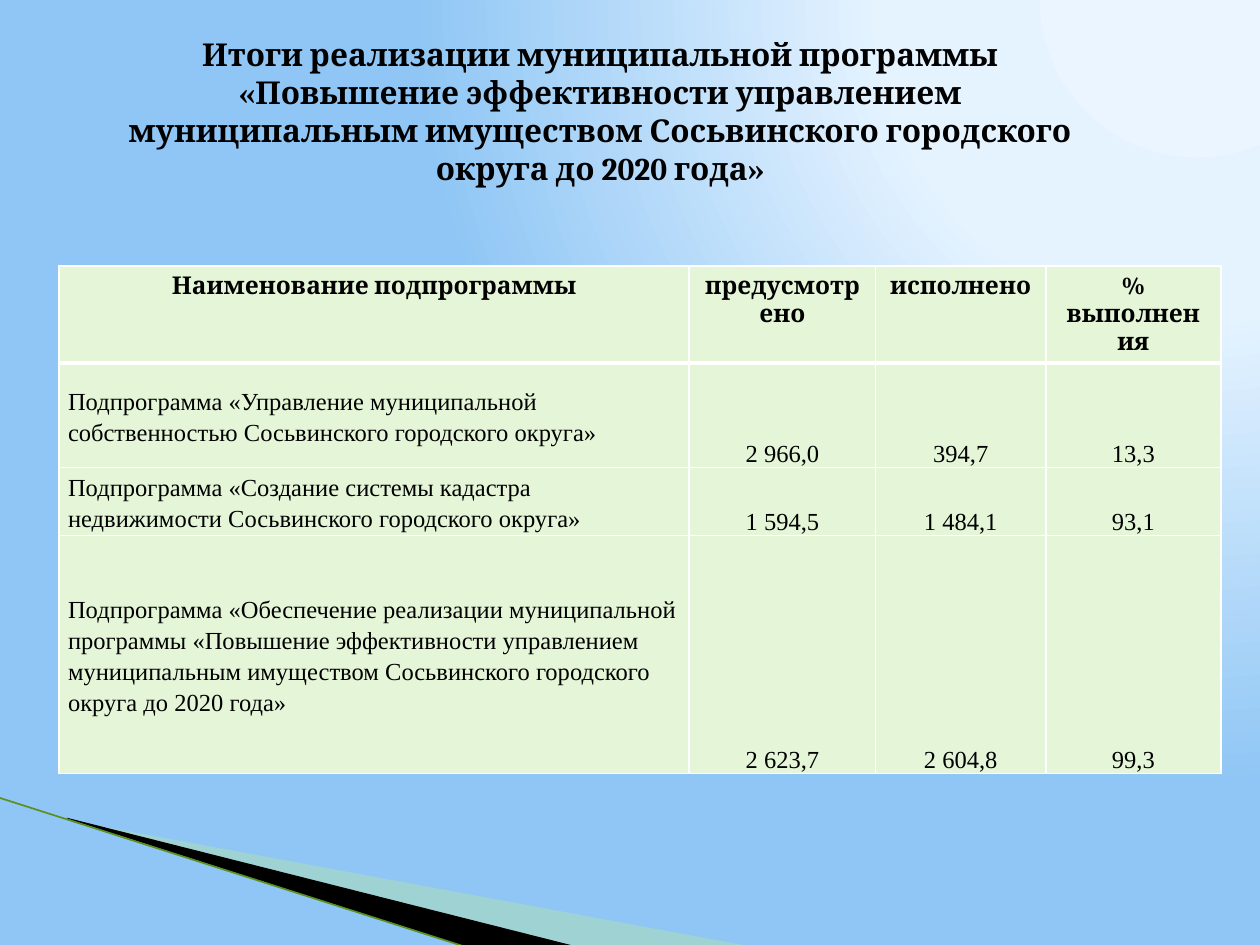
import pptx
import pptx.dml.color
import pptx.enum.shapes
import pptx.enum.text
import pptx.oxml
import pptx.oxml.ns
import pptx.util
from pptx.util import Inches

TITLE = ("Итоги реализации муниципальной программы «Повышение эффективности "
         "управлением муниципальным имуществом Сосьвинского городского округа до 2020 года»")
HEADER = ("Наименование подпрограммы", "предусмотрено", "исполнено", "% выполнения")
SUBPROGRAMS = [
    ("Подпрограмма «Управление муниципальной собственностью Сосьвинского городского округа»",
     "2 966,0", "394,7", "13,3"),
    ("Подпрограмма «Создание системы кадастра недвижимости Сосьвинского городского округа»",
     "1 594,5", "1 484,1", "93,1"),
    ("Подпрограмма «Обеспечение реализации муниципальной программы «Повышение эффективности "
     "управлением муниципальным имуществом Сосьвинского городского округа до 2020 года»",
     "2 623,7", "2 604,8", "99,3"),
]
COLUMN_WIDTHS = (5, 1.48, 1.35, 1.39)
ROW_HEIGHTS = (0.77, 0.83, 0.54, 1.89)

# Frame (left, top, width, height), corner points, fill colour name, opacity in percent
WEDGES = [
    ((0.78, 5.47, 4.16, 1.58),
     [(0.55, 6.51), (5.95, 7.51), (4.56, 7.51), (0.55, 6.5)], "pale_green", 40),
    ((-0.06, 6.33, 4.16, 0.92),
     [(0.53, 6.49), (4.57, 7.51), (3.72, 7.52), (0.54, 6.5)], "black", 100),
]

THEME = {
    "black": "000000", "white": "FFFFFF", "cell": "E5F6D8",
    "pale_green": "B8E7A1", "edge": "5A9020",
    "sky": [(0, "EAF5FF"), (40, "E5F3FF"), (100, "8FC6F5")],
    "heading_font": "Cambria", "body_font": "Times New Roman",
    "title_size": 18, "table_size": 14,
}
ALIGN = pptx.enum.text.PP_ALIGN
ANCHOR = pptx.enum.text.MSO_ANCHOR
NAMESPACE = pptx.oxml.ns.nsdecls("a")
qualified = pptx.oxml.ns.qn


def color(name):
    return pptx.dml.color.RGBColor.from_string(THEME[name])


def write(para, text, font, size, bold=False):
    span = para.add_run()
    span.text = text
    span.font.name = THEME[font]
    span.font.size = pptx.util.Pt(THEME[size])
    span.font.bold = bold
    span.font.color.rgb = color("black")


def paint_background(page):
    """Fill the page with a circular gradient centred beyond its top right."""
    fill = page.background.fill
    fill.gradient()
    stops = "".join(f'<a:gs pos="{place * 1000}"><a:srgbClr val="{value}"/></a:gs>'
                    for place, value in THEME["sky"])
    gradient = pptx.oxml.parse_xml(
        f'<a:gradFill {NAMESPACE} rotWithShape="1"><a:gsLst>{stops}</a:gsLst>'
        '<a:path path="circle"><a:fillToRect l="95000" t="-106000" r="5000" b="206000"/>'
        '</a:path></a:gradFill>')
    current = page.background._cSld.find(".//" + qualified("a:gradFill"))
    current.getparent().replace(current, gradient)


def set_frame(wedge, frame):
    """Give the wedge its frame while its corners stay where they are on the page."""
    left, top, width, height = (Inches(value) for value in frame)
    shift_x, shift_y = wedge.left - left, wedge.top - top
    outline = wedge._element.find(".//" + qualified("a:path"))
    outline.set("w", str(width))
    outline.set("h", str(height))
    for point in outline.iter(qualified("a:pt")):
        point.set("x", str(int(point.get("x")) + shift_x))
        point.set("y", str(int(point.get("y")) + shift_y))
    wedge.left, wedge.top, wedge.width, wedge.height = left, top, width, height


def add_wedge(page, frame, points, fill, opacity):
    corners = [(Inches(x), Inches(y)) for x, y in points]
    builder = page.shapes.build_freeform(*corners[0])
    builder.add_line_segments(corners[1:], close=True)
    wedge = builder.convert_to_shape()
    set_frame(wedge, frame)
    wedge.shadow.inherit = False
    wedge.fill.solid()
    wedge.fill.fore_color.rgb = color(fill)
    wedge.line.fill.background()
    if opacity < 100:
        tint = wedge.fill._xPr.find(".//" + qualified("a:srgbClr"))
        tint.append(pptx.oxml.parse_xml(f'<a:alpha {NAMESPACE} val="{opacity * 1000}"/>'))


def add_edge(page):
    edge = page.shapes.add_connector(
        pptx.enum.shapes.MSO_CONNECTOR.STRAIGHT,
        Inches(-0.01), Inches(6.33), Inches(3.71), Inches(7.52))
    edge.line.color.rgb = color("edge")
    edge.line.width = pptx.util.Pt(0.95)
    edge._element.spPr.append(pptx.oxml.parse_xml(f"<a:effectLst {NAMESPACE}/>"))


def add_borders(cell, widths):
    """Draw white borders; widths are points for left, right, top and bottom."""
    properties = cell._tc.get_or_add_tcPr()
    for index, (side, width) in enumerate(zip("LRTB", widths)):
        properties.insert(index, pptx.oxml.parse_xml(
            f'<a:ln{side} {NAMESPACE} w="{pptx.util.Pt(width)}"><a:solidFill>'
            f'<a:srgbClr val="{THEME["white"]}"/></a:solidFill></a:ln{side}>'))


def format_cell(cell, text, row, column):
    is_header = row == 0
    cell.fill.solid()
    cell.fill.fore_color.rgb = color("cell")
    add_borders(cell, (1, 1, 3 if row == 1 else 1, 3 if is_header else 1))
    para = cell.text_frame.paragraphs[0]
    para.alignment = ALIGN.CENTER if is_header or column else ALIGN.LEFT
    if not is_header:
        cell.vertical_anchor = ANCHOR.BOTTOM if column else ANCHOR.MIDDLE
        cell.margin_left = cell.margin_right = Inches(0.07)
        cell.margin_top = cell.margin_bottom = 0
        para.line_spacing = 1.15
    write(para, text, "heading_font" if is_header else "body_font", "table_size", is_header)


def add_results(page):
    rows = [HEADER] + SUBPROGRAMS
    table = page.shapes.add_table(
        len(rows), len(HEADER), Inches(0.47), Inches(2.11),
        Inches(sum(COLUMN_WIDTHS)), Inches(sum(ROW_HEIGHTS))).table
    table.horz_banding = False
    for column, width in zip(table.columns, COLUMN_WIDTHS):
        column.width = Inches(width)
    for row, height in zip(table.rows, ROW_HEIGHTS):
        row.height = Inches(height)
    for row, texts in enumerate(rows):
        for column, text in enumerate(texts):
            format_cell(table.cell(row, column), text, row, column)


def add_title(page):
    box = page.shapes.add_textbox(Inches(0.86), Inches(0.23), Inches(7.81), Inches(1.62))
    box.text_frame.word_wrap = True
    para = box.text_frame.paragraphs[0]
    para.alignment = ALIGN.CENTER
    write(para, TITLE, "heading_font", "title_size", bold=True)


def main():
    deck = pptx.Presentation()
    deck.slide_width, deck.slide_height = Inches(10), Inches(7.5)
    page = deck.slides.add_slide(deck.slide_layouts[6])
    paint_background(page)
    for wedge in WEDGES:
        add_wedge(page, *wedge)
    add_edge(page)
    add_results(page)
    add_title(page)
    deck.save("out.pptx")


if __name__ == "__main__":
    main()
